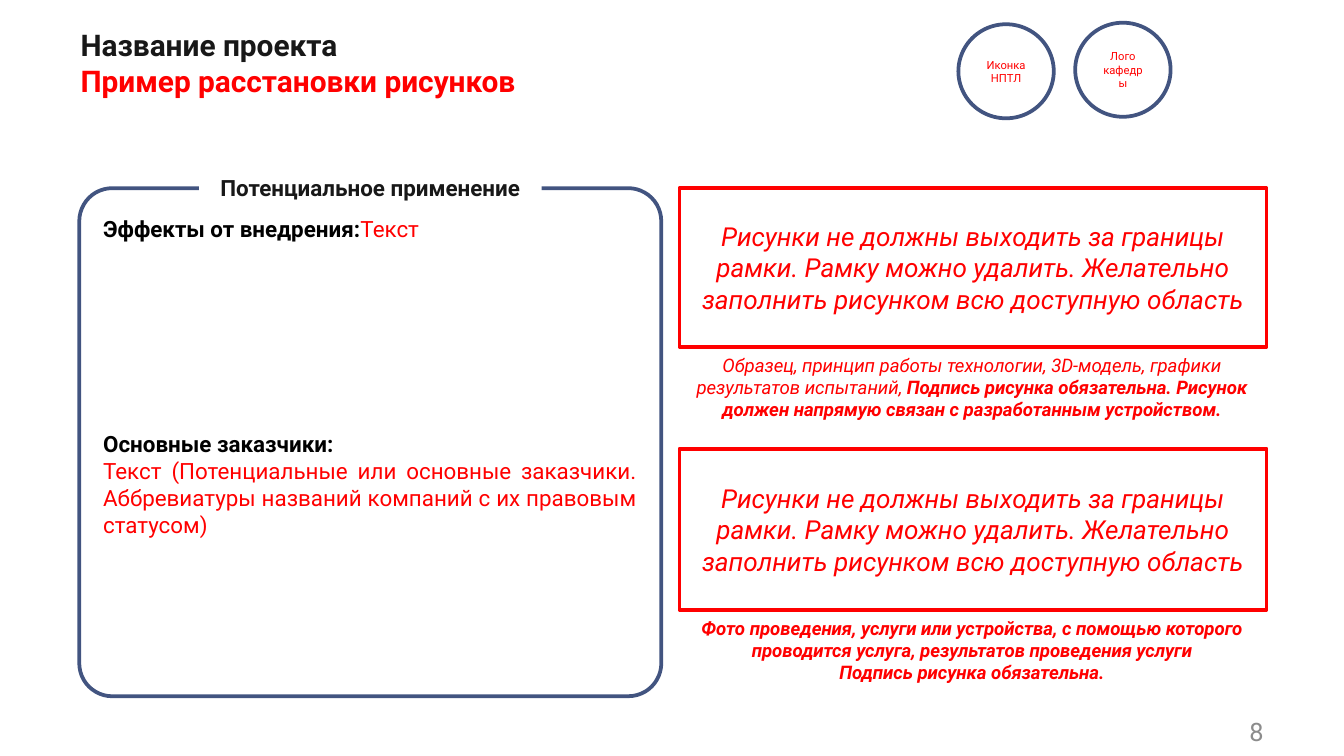
import pptx
import pptx.util
import pptx.dml.color
import pptx.enum.shapes
import pptx.enum.text

Pt = pptx.util.Pt
SHAPE = pptx.enum.shapes.MSO_SHAPE
ALIGN = pptx.enum.text.PP_ALIGN
ANCHOR = pptx.enum.text.MSO_ANCHOR

FONT = "Roboto"
COLORS = {
    "white": "FFFFFF",
    "blue": "425480",
    "red": "FF0000",
    "dark": "181818",
    "black": "000000",
    "gray": "8C8C8C",
}
FRAME_TEXT = (
    "Рисунки не должны выходить за границы рамки. Рамку можно удалить. "
    "Желательно заполнить рисунком всю доступную область"
)


def rgb(name):
    return pptx.dml.color.RGBColor.from_string(COLORS[name])


def format_run(r, size, color, bold=False, italic=False):
    r.font.name = FONT
    r.font.size = Pt(size)
    r.font.bold = bold
    r.font.italic = italic
    r.font.color.rgb = rgb(color)


def write(sp, paragraphs, size, align, anchor=ANCHOR.TOP, italic=False):
    tf = sp.text_frame
    tf.word_wrap = True
    tf.vertical_anchor = anchor
    tf.text = "\n".join(parts[0][0] for parts in paragraphs)
    for p, parts in zip(tf.paragraphs, paragraphs):
        p.alignment = align
        for text, _, _ in parts[1:]:
            p.add_run().text = text
        for r, (_, color, bold) in zip(p.runs, parts):
            format_run(r, size, color, bold, italic)


def add_outline(s, kind, box, line):
    sp = s.shapes.add_shape(kind, *map(Pt, box))
    sp.shadow.inherit = False
    sp.fill.solid()
    sp.fill.fore_color.rgb = rgb("white")
    sp.line.color.rgb = rgb(line)
    sp.line.width = Pt(2)
    return sp


def add_text(s, box, paragraphs, size, align, **style):
    sp = s.shapes.add_textbox(*map(Pt, box))
    write(sp, paragraphs, size, align, **style)
    return sp


def add_title(s):
    sp = s.shapes.title
    sp.left, sp.top, sp.width, sp.height = map(Pt, (36, 10.8, 471.6, 62.6))
    tf = sp.text_frame
    tf.text = "Название проекта\vПример расстановки рисунков"
    tf.vertical_anchor = ANCHOR.TOP
    p = tf.paragraphs[0]
    p.alignment = ALIGN.LEFT
    for r, color in zip(p.runs, ("dark", "red")):
        format_run(r, 16, color, bold=True)


def add_badge(s, left, top, lines):
    sp = add_outline(s, SHAPE.OVAL, (left, top, 51.1, 50.4), "blue")
    write(sp, [[(text, "red", False)] for text in lines], 6, ALIGN.CENTER, ANCHOR.MIDDLE)


def add_application_card(s):
    card = add_outline(s, SHAPE.ROUNDED_RECTANGLE, (42.5, 100.8, 311.8, 272.2), "blue")
    card.adjustments[0] = 0.065
    heading = add_text(s, (106.6, 90, 183.6, 21.6),
                       [[("Потенциальное применение", "dark", True)]], 12, ALIGN.CENTER)
    heading.fill.solid()
    heading.fill.fore_color.rgb = rgb("white")
    body = add_text(s, (48.2, 111.6, 300.2, 181.4), [
        [("Эффекты от внедрения:", "black", True), ("Текст", "red", False)],
        [("Основные заказчики:", "black", True)],
        [("Текст (Потенциальные или основные заказчики. Аббревиатуры названий "
          "компаний с их правовым статусом)", "red", False)],
    ], 12, ALIGN.JUSTIFY)
    body.text_frame.paragraphs[1].space_before = Pt(101)


def add_figure(s, top, height, caption):
    frame = add_outline(s, SHAPE.RECTANGLE, (364, top, 314.6, height), "red")
    write(frame, [[(FRAME_TEXT, "red", False)]], 14, ALIGN.CENTER, ANCHOR.MIDDLE, italic=True)
    add_text(s, (364, top + height, 313.2, 50), caption, 10, ALIGN.CENTER, italic=True)


def main():
    prs = pptx.Presentation()
    prs.slide_width, prs.slide_height = Pt(720), Pt(405)
    s = prs.slides.add_slide(prs.slide_layouts[5])

    add_title(s)
    add_badge(s, 513.4, 13, ["Иконка НПТЛ"])
    add_badge(s, 576, 12.2, ["Лого", "кафедры"])
    add_application_card(s)
    add_figure(s, 100.8, 85, [[
        ("Образец, принцип работы технологии, 3D-модель, графики результатов испытаний, ",
         "red", False),
        ("Подпись рисунка обязательна. Рисунок должен напрямую связан с разработанным "
         "устройством.", "red", True),
    ]])
    add_figure(s, 240.5, 86.2, [
        [("Фото проведения, услуги или устройства, с помощью которого проводится услуга, "
          "результатов проведения услуги", "red", True)],
        [("Подпись рисунка обязательна.", "red", True)],
    ])
    add_text(s, (643.7, 380.9, 40.3, 21.6), [[("8", "gray", False)]],
             13.6, ALIGN.RIGHT, anchor=ANCHOR.MIDDLE)

    prs.save("out.pptx")


if __name__ == "__main__":
    main()
